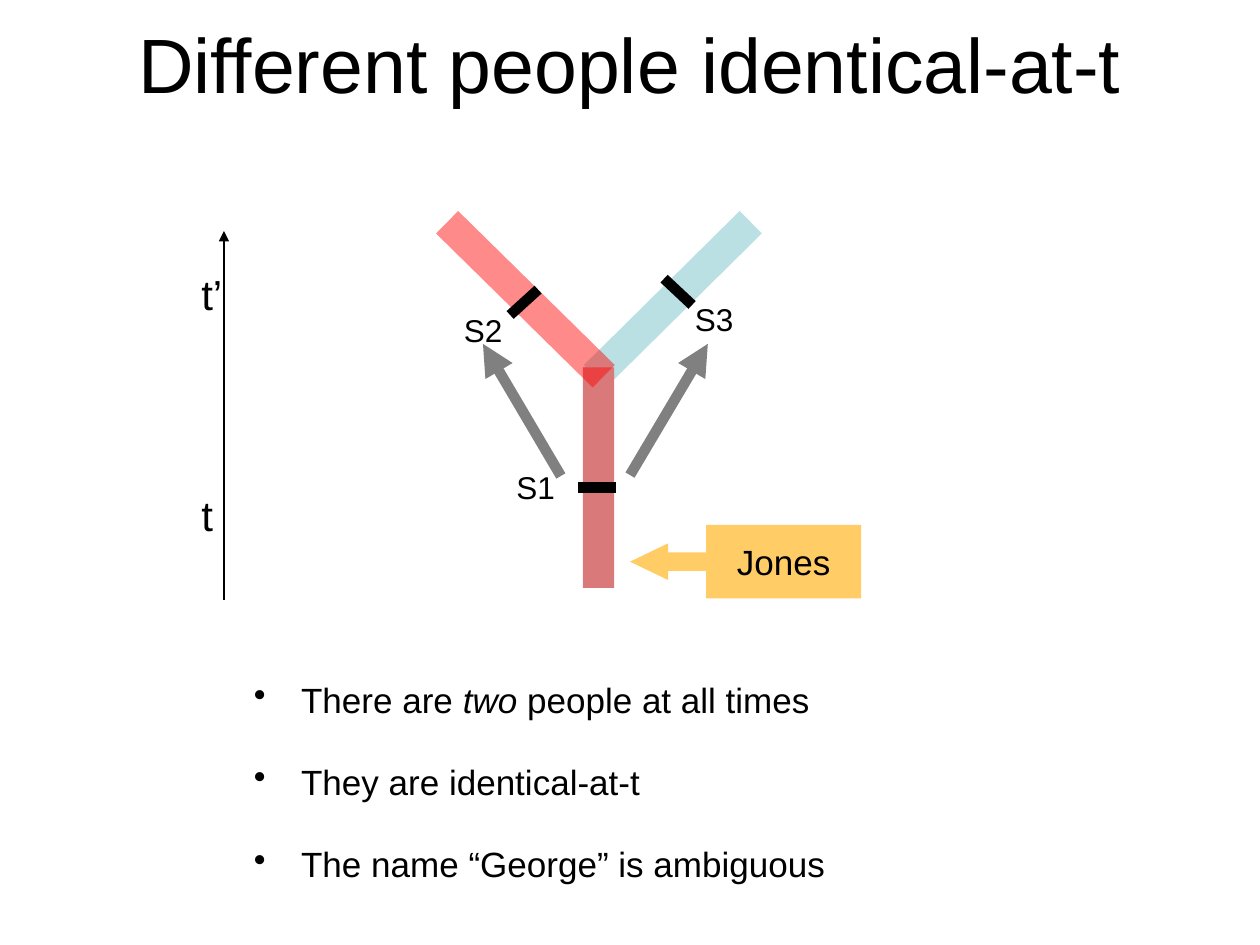
from dataclasses import dataclass

from lxml.etree import SubElement
from pptx import Presentation
from pptx.dml.color import RGBColor
from pptx.enum.shapes import MSO_CONNECTOR, MSO_SHAPE
from pptx.enum.text import MSO_ANCHOR, PP_ALIGN
from pptx.oxml.ns import qn
from pptx.util import Pt


@dataclass(frozen=True)
class Theme:
    font: str = "Arial"
    ink: str = "000000"
    red: str = "FF0000"
    blue: str = "BBE0E3"
    grey: str = "808080"
    gold: str = "FFCC66"
    title: int = 44
    axis: int = 24
    body: int = 20
    label: int = 18
    branch: int = 18
    mark: int = 6


theme = Theme()
deck = Presentation()
deck.slide_width, deck.slide_height = Pt(720), Pt(540)
page = deck.slides.add_slide(deck.slide_layouts[6])


def style(para, size, align=PP_ALIGN.LEFT):
    para.alignment = align
    para.font.name = theme.font
    para.font.size = Pt(size)
    para.font.color.rgb = RGBColor.from_string(theme.ink)


def add_line(start, end, color, width, arrow=False, opacity=None):
    line = page.shapes.add_connector(MSO_CONNECTOR.STRAIGHT, *map(Pt, start + end))
    line.line.color.rgb = RGBColor.from_string(color)
    line.line.width = Pt(width)
    properties = line._element.spPr
    outline = properties.find(qn("a:ln"))
    if opacity:
        SubElement(outline.find(".//" + qn("a:srgbClr")), qn("a:alpha"), val=str(opacity * 1000))
    if arrow:
        SubElement(outline, qn("a:tailEnd"), type="triangle")
    SubElement(properties, qn("a:effectLst"))


# Title
title = page.shapes.add_textbox(0, 0, Pt(720), Pt(72)).text_frame
title.word_wrap = True
title.vertical_anchor = MSO_ANCHOR.MIDDLE
title.text = "Different people identical-at-t"
style(title.paragraphs[0], theme.title, PP_ALIGN.CENTER)

# Bulleted claims, each a list of (wording, italic) spans
claims = [
    [("There are ", False), ("two", True), (" people at all times", False)],
    [("They are identical-at-t", False)],
    [("The name “George” is ambiguous", False)],
]
body = page.shapes.add_textbox(Pt(138), Pt(384), Pt(390), Pt(156)).text_frame
body.word_wrap = True
for index, claim in enumerate(claims):
    para = body.add_paragraph() if index else body.paragraphs[0]
    for wording, italic in claim:
        span = para.add_run()
        span.text = wording
        if italic:
            span.font.italic = True
    style(para, theme.body)
    para.space_after = Pt(23)
    properties = para._p.get_or_add_pPr()
    properties.set("marL", str(Pt(27)))
    properties.set("indent", str(Pt(-27)))
    bullet = SubElement(properties, qn("a:buChar"), char="•")
    properties.find(qn("a:defRPr")).addprevious(bullet)

# Two lives sharing a stem: the red one lies over the blue one
stem = (342, 336), (342, 210)
lives = [
    (theme.blue, None, ((340, 215), (429, 127))),
    (theme.red, 46, ((345, 215), (255.5, 127))),
]
for color, opacity, branch in lives:
    for start, end in (stem, branch):
        add_line(start, end, color, theme.branch, opacity=opacity)

# Stage marks across the branches
for start, end in [
    ((291.5, 180), (307.5, 165.5)),
    ((330.5, 278.5), (352, 278.5)),
    ((395.5, 174.25), (379.5, 159.25)),
]:
    add_line(start, end, theme.ink, theme.mark)

# Stage and time labels
for wording, left, top, width, height, size in [
    ("S1", 288, 264, 40, 29, theme.label),
    ("S3", 390, 168, 40, 29, theme.label),
    ("S2", 258, 174, 40, 29, theme.label),
    ("t", 108, 276, 14.4, 36, theme.axis),
    ("t’", 108, 150, 36, 36, theme.axis),
]:
    label = page.shapes.add_textbox(Pt(left), Pt(top), Pt(width), Pt(height)).text_frame
    label.word_wrap = True
    label.text = wording
    style(label.paragraphs[0], size)

# Arrows from S1 to the later stages, and the time axis
add_line((360, 271.5), (404.5, 196.5), theme.grey, theme.mark, arrow=True)
add_line((320.5, 272), (276, 196.5), theme.grey, theme.mark, arrow=True)
add_line((128, 342.75), (128, 132), theme.ink, 0.75, arrow=True)

# Callout naming the stem
callout = page.shapes.add_shape(
    MSO_SHAPE.LEFT_ARROW_CALLOUT, Pt(360), Pt(300), Pt(132), Pt(42))
callout.shadow.inherit = False
for index, value in enumerate((0.25, 0.25, 0.52, 0.67)):
    callout.adjustments[index] = value
callout.fill.solid()
callout.fill.fore_color.rgb = RGBColor.from_string(theme.gold)
callout.line.fill.background()
callout.text_frame.word_wrap = False
callout.text_frame.vertical_anchor = MSO_ANCHOR.MIDDLE
callout.text_frame.text = "Jones"
style(callout.text_frame.paragraphs[0], theme.body, PP_ALIGN.CENTER)

deck.save("out.pptx")
